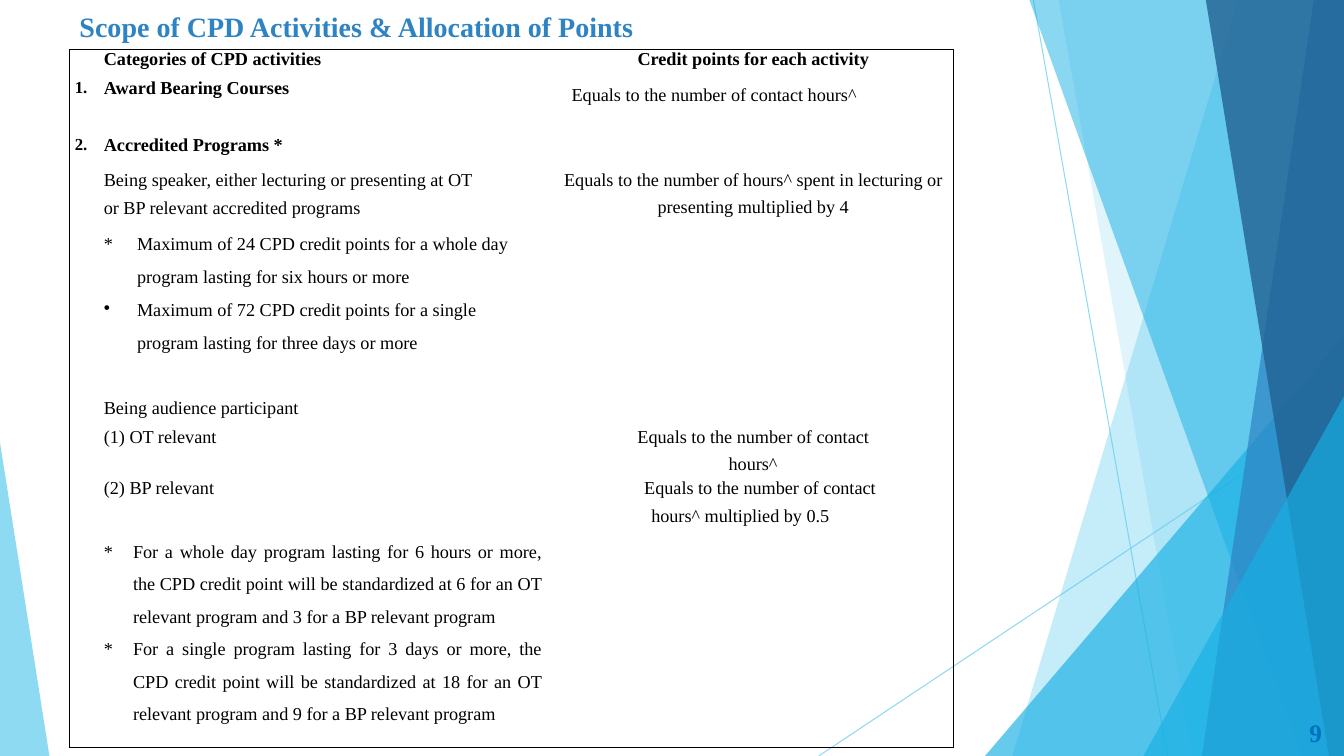
import pptx
import pptx.util
import pptx.dml.color
import pptx.enum.shapes
import pptx.enum.text
import pptx.oxml
import pptx.oxml.ns
import lxml.etree

Inches, Pt = pptx.util.Inches, pptx.util.Pt
RGB = pptx.dml.color.RGBColor
ALIGN = pptx.enum.text.PP_ALIGN
MIDDLE = pptx.enum.text.MSO_ANCHOR.MIDDLE
SHAPE = pptx.enum.shapes.MSO_SHAPE.ISOSCELES_TRIANGLE
LINE = pptx.enum.shapes.MSO_CONNECTOR.STRAIGHT
qn = pptx.oxml.ns.qn

FONT = "Times New Roman"
SKY, CYAN = RGB(0x5F, 0xCB, 0xEF), RGB(0x17, 0xB0, 0xE4)
BLUE, NAVY = RGB(0x2E, 0x83, 0xC3), RGB(0x22, 0x62, 0x92)
PAGE, BLACK = RGB(0x00, 0x70, 0xC0), RGB(0, 0, 0)
WIDE, HIGH = 13.33, 7.5

# Content: decor
RAYS = [((10.25, 0), (11.58, HIGH)), ((WIDE, 4.03), (8.12, HIGH))]
# Bands reach the right edge: top left x, bottom left x, colour, opacity
# Triangles: left, top, width, height, apex, colour, opacity
DECOR = [
    ("band", (12.28, 10.04), SKY, 36),
    ("band", (10.5, 11.83), SKY, 20),
    ("peak", (9.77, 3.33, 3.56, 4.17, 1), CYAN, 66),
    ("band", (10.21, 12.91), CYAN, 50),
    ("band", (13.03, 11.92), BLUE, 70),
    ("band", (11.96, 13.18), NAVY, 80),
    ("peak", (11.34, 3.93, 1.99, 3.57, 1), CYAN, 66),
    ("peak", (0, 4.39, 0.49, 3.11, 0), SKY, 70),
]

# Content: text boxes (place, text, size, colour, alignment)
LABELS = [
    ((0.69, 0.03, 9.4, 0.46), "Scope of CPD Activities & Allocation of Points",
     20, BLUE, ALIGN.LEFT),
    ((12.46, 7.07, 0.75, 0.4), "9", 18, PAGE, ALIGN.RIGHT),
]

# Content: paragraph styles
HEAD = dict(left=0.07, bold=True)
NUM = dict(align=ALIGN.CENTER, right=0.04, size=12, bold=True)
BODY = dict(left=0.07)
MID = dict(align=ALIGN.CENTER, left=0.12, right=0.07)
MAX = dict(left=0.4, hang=-0.33, right=0.2, lines=1.65)
RULE = dict(align=ALIGN.JUSTIFY, left=0.36, hang=-0.29, right=0.06, lines=1.62)

# Content: table cells, each a list of (text, style)
SPOT = (0.69, 0.49)
COLS = [0.27, 4.47, 4.03]
ROWS = [
    (0.29, [], [("Categories of CPD activities", HEAD)],
     [("Credit points for each activity", MID | dict(bold=True))]),
    (0.56, [("1.", NUM)], [("Award Bearing Courses", HEAD)],
     [("Equals to the number of contact hours^", dict(left=0.24, lines=1.36))]),
    (0.28, [("2.", NUM)], [("Accredited Programs *", HEAD)], []),
    (2.33, [], [
        ("Being speaker, either lecturing or presenting at OT or BP relevant "
         "accredited programs", BODY | dict(right=0.66, lines=1.38)),
        ("*\tMaximum of 24 CPD credit points for a whole day program lasting "
         "for six hours or more", MAX | dict(before=1.8)),
        ("Maximum of 72 CPD credit points for a single program lasting for "
         "three days or more", MAX | dict(before=0.4, bullet="•")),
    ], [("Equals to the number of hours^ spent in lecturing or presenting "
         "multiplied by 4", MID | dict(lines=1.36))]),
    (0.29, [], [("Being audience participant", BODY)], []),
    (0.49, [], [("(1) OT relevant", BODY)],
     [("Equals to the number of contact", MID),
      ("hours^", MID | dict(before=5.3))]),
    (0.51, [], [("(2) BP relevant", BODY)],
     [("Equals to the number of contact", dict(left=0.96)),
      ("hours^ multiplied by 0.5", dict(left=1.03, before=5.3))]),
    (2.16, [], [
        ("*\tFor a whole day program lasting for 6 hours or more, the CPD "
         "credit point will be standardized at 6 for an OT relevant program "
         "and 3 for a BP relevant program", RULE),
        ("*\tFor a single program lasting for 3 days or more, the CPD credit "
         "point will be standardized at 18 for an OT relevant program and 9 "
         "for a BP relevant program", RULE | dict(before=0.2)),
    ], []),
]


def fade(part, share):
    color = part.find(".//" + qn("a:srgbClr"))
    lxml.etree.SubElement(color, qn("a:alpha"), val=str(share * 1000))


def add_run(para, text, size, color, bold):
    run = para.add_run()
    run.text = text
    font = run.font
    font.name, font.size, font.bold = FONT, Pt(size), bold
    font.color.rgb = color


def add_ray(slide, start, end):
    ray = slide.shapes.add_connector(LINE, *map(Inches, start + end))
    ray.line.color.rgb = SKY
    ray.line.width = Pt(0.75)
    props = ray._element.spPr
    fade(props, 70)
    lxml.etree.SubElement(props, qn("a:effectLst"))


def add_decor(slide, kind, dims, color, share):
    if kind == "band":
        top, foot = dims
        pen = slide.shapes.build_freeform(Inches(top), 0)
        ends = [(WIDE, 0), (WIDE, HIGH), (foot, HIGH)]
        pen.add_line_segments([(Inches(x), Inches(y)) for x, y in ends])
        shape = pen.convert_to_shape()
    else:
        shape = slide.shapes.add_shape(SHAPE, *map(Inches, dims[:4]))
        shape.adjustments[0] = dims[4]
    shape.shadow.inherit = False
    shape.fill.solid()
    shape.fill.fore_color.rgb = color
    fade(shape._element.spPr, share)
    shape.line.fill.background()


def add_label(slide, place, text, size, color, align):
    frame = slide.shapes.add_textbox(*map(Inches, place)).text_frame
    frame.word_wrap = True
    frame.vertical_anchor = MIDDLE
    para = frame.paragraphs[0]
    para.alignment = align
    add_run(para, text, size, color, True)


def fill_para(para, text, look):
    para.alignment = look.get("align", ALIGN.LEFT)
    para.line_spacing = look.get("lines", 1.0)
    if "before" in look:
        para.space_before = Pt(look["before"])
    props = para._p.get_or_add_pPr()
    for name, key in (("marL", "left"), ("marR", "right"), ("indent", "hang")):
        props.set(name, str(Inches(look.get(key, 0))))
    if "bullet" in look:
        lxml.etree.SubElement(props, qn("a:buChar"), char=look["bullet"])
    add_run(para, text, look.get("size", 13), BLACK, look.get("bold", False))


def set_edges(cell, edges):
    props = cell._tc.get_or_add_tcPr()
    for spot, (side, shown) in enumerate(edges):
        edge = lxml.etree.Element(qn("a:ln" + side), w=str(Pt(1)))
        if shown:
            fill = lxml.etree.SubElement(edge, qn("a:solidFill"))
            lxml.etree.SubElement(fill, qn("a:srgbClr"), val=str(BLACK))
        else:
            lxml.etree.SubElement(edge, qn("a:noFill"))
        props.insert(spot, edge)


def fill_cell(cell, paras):
    cell.margin_left = cell.margin_right = 0
    cell.margin_top = cell.margin_bottom = 0
    cell.fill.background()
    frame = cell.text_frame
    for spot, (text, look) in enumerate(paras):
        para = frame.add_paragraph() if spot else frame.paragraphs[0]
        fill_para(para, text, look)
    if not paras:
        lxml.etree.SubElement(frame.paragraphs[0]._p, qn("a:endParaRPr"), sz="1200")


def add_grid(slide):
    size = (sum(COLS), sum(row[0] for row in ROWS))
    grid = slide.shapes.add_table(len(ROWS), len(COLS), *map(Inches, SPOT + size)).table
    grid.first_row = grid.horz_banding = False
    for c, width in enumerate(COLS):
        grid.columns[c].width = Inches(width)
    for r, (height, *cells) in enumerate(ROWS):
        grid.rows[r].height = Inches(height)
        for c, paras in enumerate(cells):
            cell = grid.cell(r, c)
            fill_cell(cell, paras)
            set_edges(cell, [("L", c == 0), ("R", c == len(COLS) - 1),
                             ("T", r == 0), ("B", r == len(ROWS) - 1)])


def main():
    deck = pptx.Presentation()
    deck.slide_width, deck.slide_height = Inches(WIDE), Inches(HIGH)
    slide = deck.slides.add_slide(deck.slide_layouts[6])
    for ray in RAYS:
        add_ray(slide, *ray)
    for item in DECOR:
        add_decor(slide, *item)
    for label in LABELS:
        add_label(slide, *label)
    add_grid(slide)
    deck.save("out.pptx")


if __name__ == "__main__":
    main()
